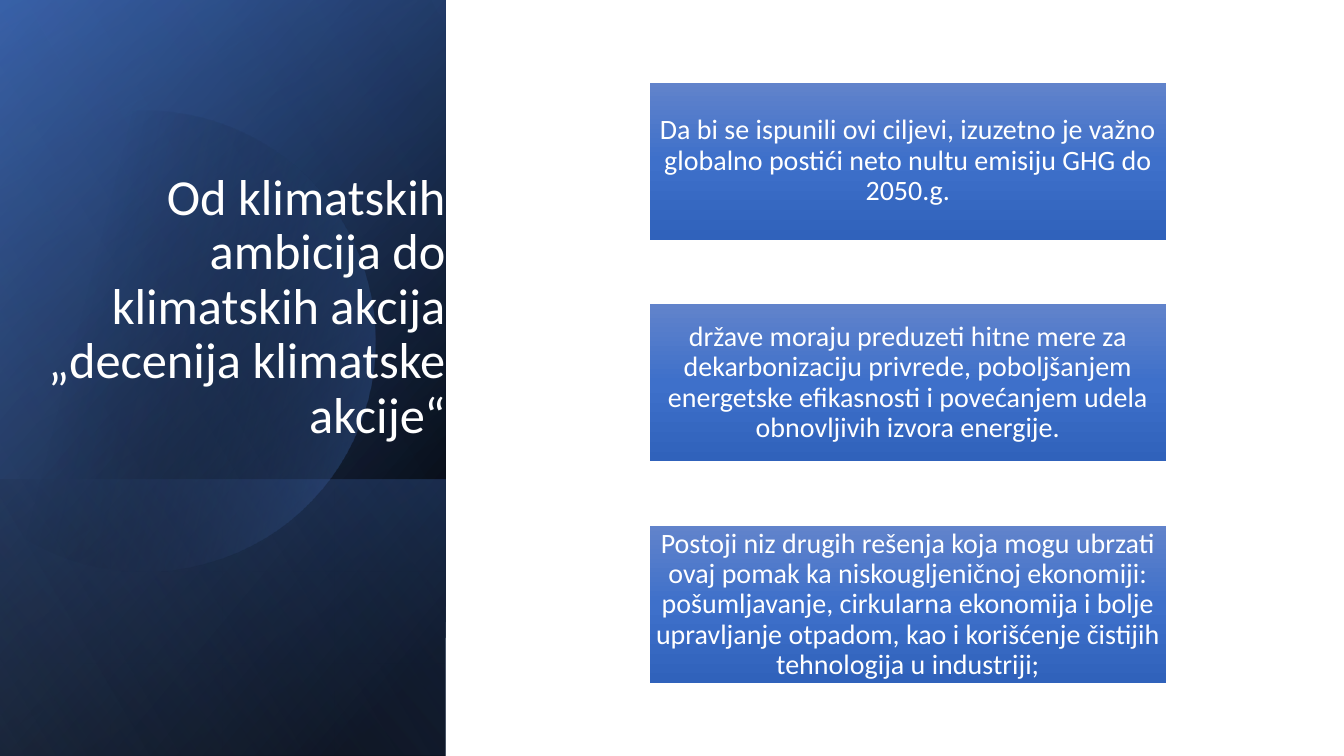
from lxml.etree import SubElement
from pptx import Presentation
from pptx.dml.color import RGBColor
from pptx.enum.shapes import MSO_SHAPE
from pptx.enum.text import MSO_ANCHOR, PP_ALIGN
from pptx.oxml.ns import qn
from pptx.util import Cm, Pt

# Content
TITLE = "Od klimatskih ambicija do klimatskih akcija\v„decenija klimatske akcije“"
CARDS = [
    "Da bi se ispunili ovi ciljevi, izuzetno je važno globalno postići neto nultu emisiju GHG do 2050.g.",
    "države moraju preduzeti hitne mere za dekarbonizaciju privrede, poboljšanjem energetske "
    "efikasnosti i povećanjem udela obnovljivih izvora energije.",
    "Postoji niz drugih rešenja koja mogu ubrzati ovaj pomak ka niskougljeničnoj ekonomiji: "
    "pošumljavanje, cirkularna ekonomija i bolje upravljanje otpadom, kao i korišćenje čistijih "
    "tehnologija u industriji;",
]

# Gradients: angle, then stops of (position %, colour, opacity %)
THEME = {
    "font": "Calibri", "text": "FFFFFF", "title_size": 36, "card_size": 20,
    "base": (50, [(8, "000000", 100), (100, "2F5597", 100)]),
    "glow": (30, [(0, "000000", 0), (99, "4472C4", 46)]),
    "foot": (130, [(2, "4472C4", 29), (100, "000000", 30)]),
    "disc": (14, [(29, "000000", 0), (100, "4472C4", 43)]),
    "sheen": (120, [(0, "000000", 0), (99, "8FAADC", 11)]),
    "card": (90, [(0, "6183CB", 100), (50, "3E70CA", 100), (100, "3062BB", 100)]),
}

# Layout in centimetres: left, top, width, height
SLIDE_WIDTH, SLIDE_HEIGHT = 33.87, 19.05
PANEL = (0, 0, 11.23, SLIDE_HEIGHT)
PANEL_FOOT = (0, 12.09, 11.23, 6.96)
TITLE_BOX = (0.58, 4.67, 10.9, 6.65)
CARD_LEFT, CARD_TOP, CARD_WIDTH, CARD_HEIGHT, CARD_PITCH = 16.38, 2.08, 13, 3.96, 5.59

# Disc outline: one point is a straight side, three points are a Bézier curve
DISC_START = (3.78, 2.79)
DISC_SIDES = [
    [(6.25, 2.84), (8.51, 4.5), (9.22, 6.99)],
    [(10.11, 10.08), (8.33, 13.3), (5.26, 14.17)],
    [(3.33, 14.73), (1.35, 14.25), (-0.08, 13.06)],
    [(-0.38, 12.78)],
    [(-0.38, 4.45)],
    [(0, 4.09)],
    [(0.58, 3.58), (1.27, 3.23), (2.03, 3.02)],
    [(2.62, 2.87), (3.2, 2.79), DISC_START],
]
CURVE_STEPS = 24


def paint(shape, gradient):
    angle, stops = gradient
    shape.shadow.inherit = False
    shape.line.fill.background()
    shape.fill.gradient()
    fill = shape._element.spPr.find(qn("a:gradFill"))
    stop_list = fill.find(qn("a:gsLst"))
    for stop in list(stop_list):
        stop_list.remove(stop)
    for position, colour, opacity in stops:
        stop = SubElement(stop_list, qn("a:gs"), pos=str(position * 1000))
        tone = SubElement(stop, qn("a:srgbClr"), val=colour)
        if opacity < 100:
            SubElement(tone, qn("a:alpha"), val=str(opacity * 1000))
    fill.find(qn("a:lin")).set("ang", str(angle * 60000))


def add_block(page, area, gradient):
    block = page.shapes.add_shape(MSO_SHAPE.RECTANGLE, *map(Cm, area))
    paint(block, gradient)
    return block


def add_turned_block(page, area, gradient):
    """Cover the area with a mirrored rectangle turned a quarter."""
    left, top, width, height = area
    shift = (width - height) / 2
    block = add_block(page, (left + shift, top - shift, height, width), gradient)
    block.rotation = 90
    block._element.spPr.xfrm.set("flipH", "1")


def trace(start, sides):
    points = [start]
    for side in sides:
        if len(side) == 1:
            points += side
            continue
        corners = [points[-1], *side]
        for step in range(1, CURVE_STEPS + 1):
            t = step / CURVE_STEPS
            weights = ((1 - t) ** 3, 3 * t * (1 - t) ** 2, 3 * t * t * (1 - t), t ** 3)
            points.append(tuple(sum(w * c[axis] for w, c in zip(weights, corners)) for axis in (0, 1)))
    return [(Cm(x), Cm(y)) for x, y in points]


def write(box, text, *, size, align, anchor, inset=None):
    frame = box.text_frame
    frame.word_wrap = True
    frame.vertical_anchor = anchor
    if inset is not None:
        frame.margin_left = frame.margin_right = frame.margin_top = frame.margin_bottom = Cm(inset)
    para = frame.paragraphs[0]
    para.text = text
    para.alignment = align
    para.line_spacing = 0.9
    for span in para.runs:
        span.font.name = THEME["font"]
        span.font.size = Pt(size)
        span.font.color.rgb = RGBColor.from_string(THEME["text"])


def main():
    deck = Presentation()
    deck.slide_width, deck.slide_height = Cm(SLIDE_WIDTH), Cm(SLIDE_HEIGHT)
    page = deck.slides.add_slide(deck.slide_layouts[6])

    # Dark panel with its layers of light
    add_turned_block(page, PANEL, THEME["base"])
    add_turned_block(page, PANEL, THEME["glow"])
    add_turned_block(page, PANEL_FOOT, THEME["foot"])
    first, *others = trace(DISC_START, DISC_SIDES)
    outline = page.shapes.build_freeform(*first)
    outline.add_line_segments(others, close=True)
    paint(outline.convert_to_shape(), THEME["disc"])
    add_turned_block(page, PANEL, THEME["sheen"])

    # Title
    title = page.shapes.add_textbox(*map(Cm, TITLE_BOX))
    write(title, TITLE, size=THEME["title_size"], align=PP_ALIGN.RIGHT, anchor=MSO_ANCHOR.BOTTOM)

    # Cards
    for index, text in enumerate(CARDS):
        area = (CARD_LEFT, CARD_TOP + index * CARD_PITCH, CARD_WIDTH, CARD_HEIGHT)
        card = add_block(page, area, THEME["card"])
        write(card, text, size=THEME["card_size"], align=PP_ALIGN.CENTER,
              anchor=MSO_ANCHOR.MIDDLE, inset=0.03)

    deck.save("out.pptx")


if __name__ == "__main__":
    main()
